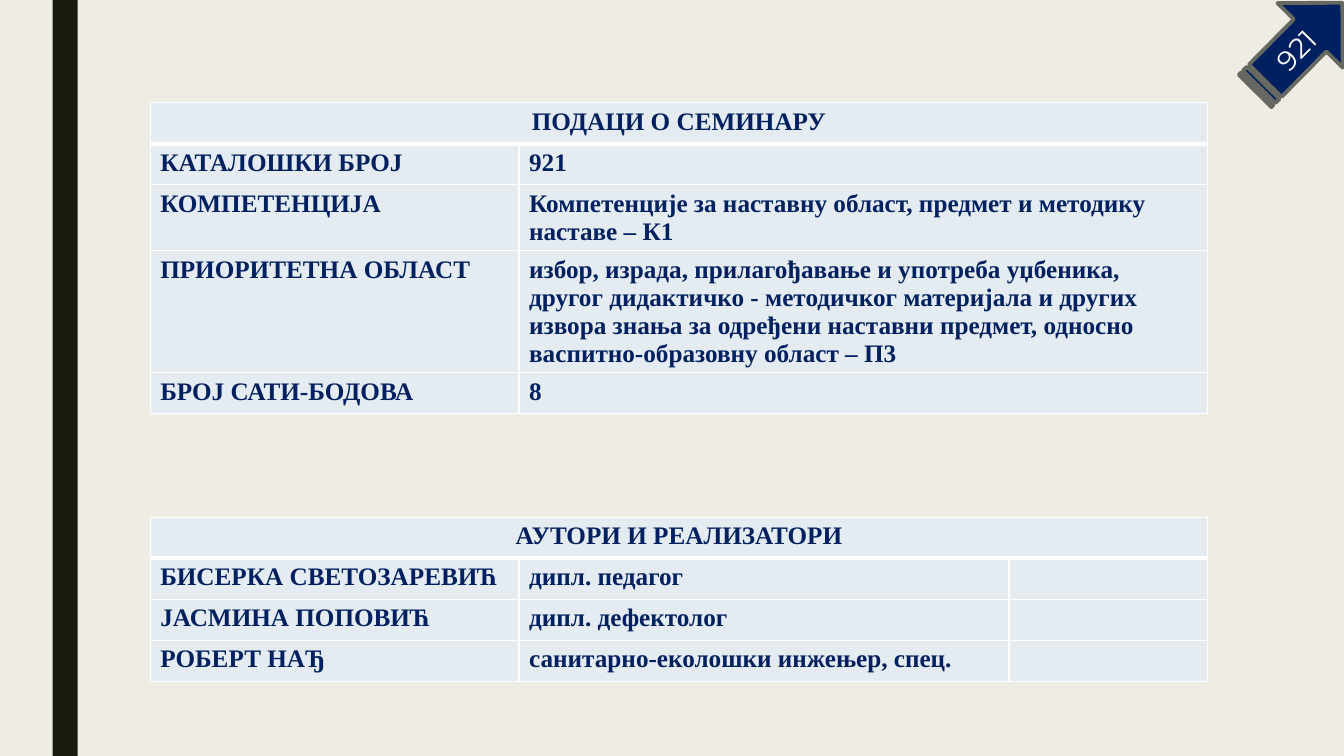
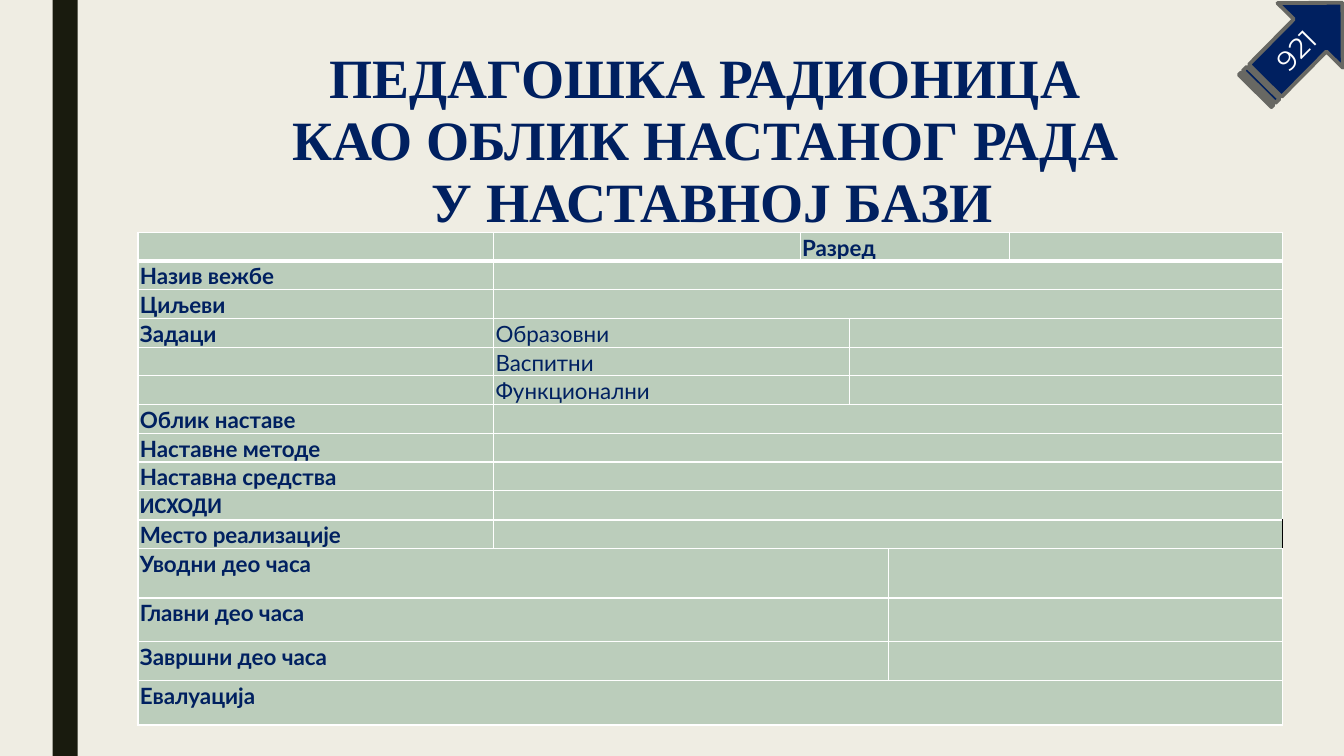
import dataclasses

import lxml.etree
import pptx
import pptx.dml.color
import pptx.enum.shapes
import pptx.enum.text
import pptx.oxml.ns
import pptx.util

Pt = pptx.util.Pt
qn = pptx.oxml.ns.qn
Align = pptx.enum.text.PP_ALIGN
Anchor = pptx.enum.text.MSO_ANCHOR
Preset = pptx.enum.shapes.MSO_SHAPE


@dataclasses.dataclass(frozen=True)
class Theme:
    page: str = "EFEDE3"
    bar: str = "191B0E"
    navy: str = "002060"
    outline: str = "686863"
    white: str = "FFFFFF"
    black: str = "000000"
    info: str = "E4ECF1"
    plan: str = "BBCDBB"
    rule: float = 1
    header_rule: float = 3
    empty_size: int = 10
    title_font = {"name": "Times New Roman", "size": Pt(39.6), "bold": True}
    badge_font = {"name": "Montserrat", "size": Pt(20), "bold": False}
    info_font = {"name": "Times New Roman", "size": Pt(18), "bold": True}
    plan_font = {"name": "Lato", "size": Pt(16), "bold": True}


def rgb(value):
    return pptx.dml.color.RGBColor.from_string(value)


def apply(target, values):
    for name, value in values.items():
        setattr(target, name, value)


class Deck:
    def __init__(self, theme):
        self.theme = theme
        self.prs = pptx.Presentation()
        apply(self.prs, {"slide_width": Pt(960), "slide_height": Pt(540)})
        self.s = None
        fill = self.prs.slide_master.background.fill
        fill.solid()
        fill.fore_color.rgb = rgb(theme.page)

    def slide(self, title=None):
        layout = self.prs.slide_layouts[5 if title else 6]
        self.s = self.prs.slides.add_slide(layout)
        if title:
            self.title(title)

    def master_bar(self):
        sp = self.shape(Preset.RECTANGLE, (37.5, 0, 18, 540), self.theme.bar)
        sp.element.nvSpPr.cNvPr.set("id", "100")
        self.prs.slide_master.shapes.element.insert(2, sp.element)

    def title(self, lines):
        sp = self.s.shapes.title
        apply(sp, {"left": Pt(81.4), "top": Pt(31.7), "width": Pt(854.6), "height": Pt(59)})
        tf = sp.text_frame
        apply(tf, {"word_wrap": True, "vertical_anchor": Anchor.TOP,
                   "auto_size": pptx.enum.text.MSO_AUTO_SIZE.NONE})
        p = tf.paragraphs[0]
        apply(p, {"alignment": Align.CENTER, "line_spacing": 0.93})
        for i, line in enumerate(lines):
            if i:
                p.add_line_break()
            self.run(p, line, self.theme.title_font, self.theme.navy)

    def run(self, p, text, font, color):
        r = p.add_run()
        r.text = text
        apply(r.font, font)
        r.font.color.rgb = rgb(color)

    def shape(self, preset, box, fill, line=None, width=0):
        sp = self.s.shapes.add_shape(preset, *map(Pt, box))
        sp.shadow.inherit = False
        sp.fill.solid()
        sp.fill.fore_color.rgb = rgb(fill)
        if line:
            sp.line.color.rgb = rgb(line)
            sp.line.width = Pt(width)
        else:
            sp.line.fill.background()
        return sp

    def badge(self, text):
        sp = self.shape(Preset.STRIPED_RIGHT_ARROW, (883.4, 0.7, 88.6, 65.5),
                        self.theme.navy, self.theme.outline, 2.75)
        sp.rotation = 314.7
        tf = sp.text_frame
        tf.vertical_anchor = Anchor.MIDDLE
        p = tf.paragraphs[0]
        p.alignment = Align.CENTER
        self.run(p, text, self.theme.badge_font, self.theme.white)

    def table(self, left, top, cols, heights, rows, fill, font, margins=None,
              paragraph=None, header=None, dark_row=None):
        frame = self.s.shapes.add_table(len(rows), len(cols), Pt(left), Pt(top),
                                        Pt(sum(cols)), Pt(sum(heights)))
        tbl = frame.table
        tbl.horz_banding = False
        for col, width in zip(tbl.columns, cols):
            col.width = Pt(width)
        for row, height in zip(tbl.rows, heights):
            row.height = Pt(height)
        for i, row in enumerate(rows):
            for j in range(len(cols)):
                dark = i == dark_row and j > 0
                self.cell(tbl.cell(i, j), i, fill, margins, dark)
            j = 0
            for text, span, *change in row:
                cell = tbl.cell(i, j)
                if span > 1:
                    cell.merge(tbl.cell(i, j + span - 1))
                p = cell.text_frame.paragraphs[0]
                apply(p, (header if i == 0 else paragraph) or {})
                if text:
                    self.run(p, text, font | (change[0] if change else {}), self.theme.navy)
                else:
                    lxml.etree.SubElement(p._p, qn("a:endParaRPr"),
                                          sz=str(self.theme.empty_size * 100))
                j += span

    def cell(self, cell, row, fill, margins, dark):
        t = self.theme
        edges = {
            "a:lnL": (t.white, t.rule),
            "a:lnR": (t.black if dark else t.white, t.rule),
            "a:lnT": (t.white, t.header_rule if row == 1 else t.rule),
            "a:lnB": (t.white, t.header_rule if row == 0 else t.rule),
        }
        tc_pr = cell._tc.get_or_add_tcPr()
        for tag, (color, width) in edges.items():
            ln = lxml.etree.SubElement(tc_pr, qn(tag), w=str(Pt(width)))
            solid = lxml.etree.SubElement(ln, qn("a:solidFill"))
            lxml.etree.SubElement(solid, qn("a:srgbClr"), val=color)
        cell.fill.solid()
        cell.fill.fore_color.rgb = rgb(fill)
        apply(cell, margins or {})


def seminar_slide(deck):
    t = deck.theme
    style = {"fill": t.info, "font": t.info_font, "header": {"alignment": Align.CENTER}}
    line = 29.3
    deck.slide()
    deck.master_bar()
    facts = [
        ("КАТАЛОШКИ БРОЈ", "921"),
        ("КОМПЕТЕНЦИЈА", "Компетенције за наставну област, предмет и методику наставе – К1"),
        ("ПРИОРИТЕТНА ОБЛАСТ", "избор, израда, прилагођавање и употреба уџбеника, другог "
         "дидактичко - методичког материјала и других извора знања за одређени наставни "
         "предмет, односно васпитно-образовну област – П3"),
        ("БРОЈ САТИ-БОДОВА", "8"),
    ]
    authors = [
        ("БИСЕРКА СВЕТОЗАРЕВИЋ", "дипл. педагог", ""),
        ("ЈАСМИНА ПОПОВИЋ", "дипл. дефектолог", ""),
        ("РОБЕРТ НАЂ", "санитарно-еколошки инжењер, спец.", ""),
    ]
    tables = [
        (369.4, "АУТОРИ И РЕАЛИЗАТОРИ", authors, [263.5, 350, 142], [line] * 4),
        (73.4, "ПОДАЦИ О СЕМИНАРУ", facts, [263.5, 492], [line, line, 47.2, 87.1, line]),
    ]
    for top, heading, body, cols, heights in tables:
        rows = [[(heading, len(cols))]] + [[(text, 1) for text in row] for row in body]
        deck.table(107.3, top, cols, heights, rows, **style)
    deck.badge("921")


def workshop_slide(deck):
    t = deck.theme
    deck.slide(["ПЕДАГОШКА РАДИОНИЦА ", "КАО ОБЛИК НАСТАНОГ РАДА ", "У НАСТАВНОЈ БАЗИ"])
    plain = {"bold": False}
    paragraph = {"alignment": Align.JUSTIFY, "line_spacing": 1.07}
    rows = [[("", 1), ("", 1), ("Разред", 3), ("", 1)]]
    rows += [[(text, 1), ("", 5)] for text in ("Назив вежбе", "Циљеви")]
    rows += [[(text, 1), (task, 2, plain), ("", 3)] for text, task in
             (("Задаци", "Образовни"), ("", "Васпитни"), ("", "Функционални"))]
    rows += [[(text, 1), ("", 5)] for text in
             ("Облик наставе", "Наставне методе", "Наставна средства")]
    rows += [[("ИСХОДИ", 1, {"name": "Calibri"}), ("", 5)], [("Место реализације", 1), ("", 5)]]
    rows += [[(text, 4), ("", 2)] for text in
             ("Уводни део часа", "Главни део часа", "Завршни део часа")]
    rows += [[("Евалуација", 6)]]
    margins = {"margin_left": Pt(1.4), "margin_right": Pt(1.4),
               "margin_top": 0, "margin_bottom": 0}
    deck.table(98.6, 166, [254, 219, 35, 28, 86.5, 195], [20.5] * 11 + [35.3, 31, 28, 31.7],
               rows, t.plan, t.plan_font, margins, paragraph, paragraph, dark_row=10)
    deck.badge("921")


def main():
    deck = Deck(Theme())
    seminar_slide(deck)
    workshop_slide(deck)
    deck.prs.save("out.pptx")


if __name__ == "__main__":
    main()
